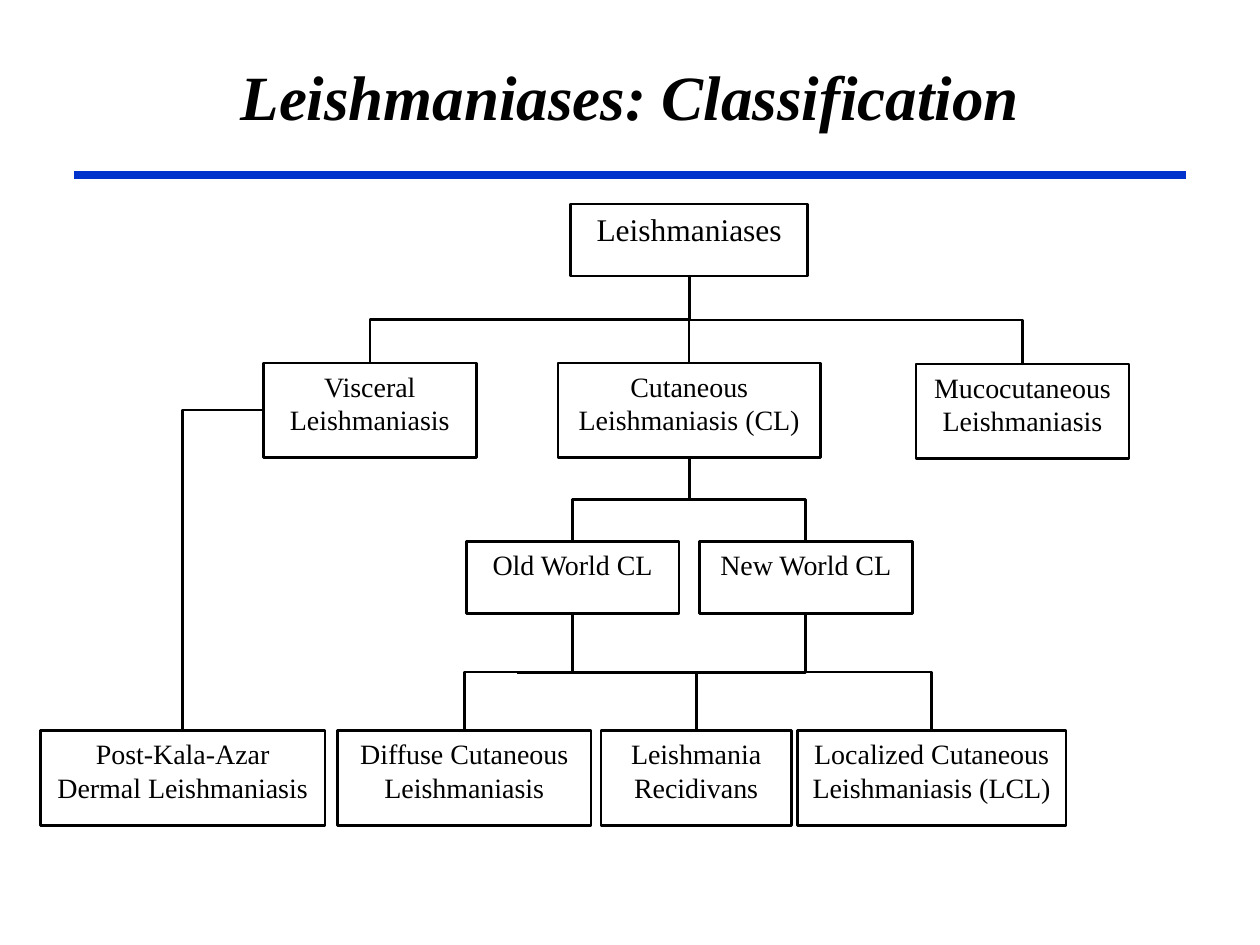
from dataclasses import dataclass

from lxml.etree import SubElement as Sub
from pptx import Presentation
from pptx.dml.color import RGBColor as Rgb
from pptx.enum.shapes import MSO_CONNECTOR as Link, MSO_SHAPE as Shape
from pptx.enum.text import MSO_ANCHOR as Anchor, PP_ALIGN as Align
from pptx.oxml.ns import qn
from pptx.util import Inches, Pt

BLACK = Rgb(0, 0, 0)
WHITE = Rgb(255, 255, 255)
BLUE = Rgb(0, 51, 204)
FONT = "Times New Roman"
WIDE, HIGH = Inches(10), Inches(7.5)
COL, ROW = WIDE / 100, HIGH / 75
TALL, SHORT = 7.5, 5.7


@dataclass(frozen=True)
class Node:
    text: str
    col: float
    row: float
    cols: float
    rows: float = TALL
    size: int = 16

    @property
    def mid(self) -> float:
        return self.col + self.cols / 2

    @property
    def foot(self) -> float:
        return self.row + self.rows


ROOT = Node("Leishmaniases", 45.3, 16.2, 18.8, SHORT, 18)
VISC = Node("Visceral Leishmaniasis", 20.9, 28.8, 16.9)
CUT = Node("Cutaneous Leishmaniasis (CL)", 44.3, 28.8, 20.8)
MUCO = Node("Mucocutaneous Leishmaniasis", 72.7, 28.9, 16.9)
OLD = Node("Old World CL", 37, 43, 16.9, SHORT)
NEW = Node("New World CL", 55.5, 43, 16.9, SHORT)
POST = Node("Post-Kala-Azar Dermal Leishmaniasis", 3.2, 58, 22.6)
DIFF = Node("Diffuse Cutaneous Leishmaniasis", 26.8, 58, 20.1)
RECI = Node("Leishmania Recidivans", 47.7, 58, 15.1)
LOCAL = Node("Localized Cutaneous Leishmaniasis (LCL)", 63.3, 58, 21.3)
NODES = [ROOT, VISC, CUT, MUCO, OLD, NEW, POST, DIFF, RECI, LOCAL]
FORKS = [(ROOT, VISC), (ROOT, MUCO), (CUT, OLD), (CUT, NEW),
         (OLD, DIFF), (OLD, RECI), (OLD, LOCAL)]


def write(frame, text: str, size: int, bold: bool = False,
          slant: bool = False, anchor=Anchor.TOP) -> None:
    frame.word_wrap = True
    frame.vertical_anchor = anchor
    para = frame.paragraphs[0]
    para.alignment = Align.CENTER
    run = para.add_run()
    run.text = text
    font = run.font
    font.name, font.size = FONT, Pt(size)
    font.bold, font.italic = bold, slant
    font.color.rgb = BLACK


def place(shape, col: float, row: float, cols: float, rows: float) -> None:
    shape.left, shape.top = round(col * COL), round(row * ROW)
    shape.width, shape.height = round(cols * COL), round(rows * ROW)


def box(slide, node: Node):
    shape = slide.shapes.add_shape(Shape.FLOWCHART_PROCESS, 0, 0, 0, 0)
    place(shape, node.col, node.row, node.cols, node.rows)
    shape.shadow.inherit = False
    shape.fill.solid()
    shape.fill.fore_color.rgb = WHITE
    shape.line.color.rgb = BLACK
    shape.line.width = Pt(1.5)
    write(shape.text_frame, node.text, node.size)
    return shape


def link(slide, kind, x1: float, y1: float, x2: float, y2: float,
         color: Rgb = BLACK, width: float = 1.5):
    line = slide.shapes.add_connector(
        kind, round(x1 * COL), round(y1 * ROW),
        round(x2 * COL), round(y2 * ROW))
    line.line.color.rgb = color
    line.line.width = Pt(width)
    Sub(line._element.spPr, qn("a:effectLst"))
    return line


def corner(line) -> None:
    line._element.spPr.find(qn("a:prstGeom")).set("prst", "bentConnector2")


def drop(slide, x1: float, y1: float, x2: float, y2: float):
    mid, half = (x1 + x2) / 2, (y2 - y1) / 2
    level, reach = (y1 + y2) / 2, abs(x2 - x1) / 2
    ends = (mid - half, mid + half)
    if x2 > x1:
        ends = ends[::-1]
    line = link(slide, Link.ELBOW, ends[0], level - reach,
                ends[1], level + reach)
    turn = 270 if x2 > x1 else 90
    line._element.spPr.find(qn("a:xfrm")).set("rot", str(turn * 60000))
    return line


def main() -> None:
    deck = Presentation()
    deck.slide_width, deck.slide_height = WIDE, HIGH
    slide = deck.slides.add_slide(deck.slide_layouts[5])
    title = slide.shapes.title
    place(title, 5, 1.3, 90, 12.5)
    write(title.text_frame, "Leishmaniases: Classification", 36,
          bold=True, slant=True, anchor=Anchor.MIDDLE)
    link(slide, Link.STRAIGHT, 5.9, 13.9, 94.1, 13.9, BLUE, 4.5)

    boxes = {node: box(slide, node) for node in NODES}
    for top, low in FORKS:
        drop(slide, top.mid, top.foot, low.mid, low.row)
    stem = link(slide, Link.STRAIGHT, ROOT.mid, ROOT.foot, CUT.mid, CUT.row)
    stem.begin_connect(boxes[ROOT], 2)
    stem.end_connect(boxes[CUT], 0)
    corner(link(slide, Link.ELBOW, VISC.col, VISC.row + TALL / 2,
                POST.mid, POST.row))
    corner(drop(slide, NEW.mid, NEW.foot, 41, (NEW.foot + LOCAL.row) / 2))
    deck.save("out.pptx")


if __name__ == "__main__":
    main()
